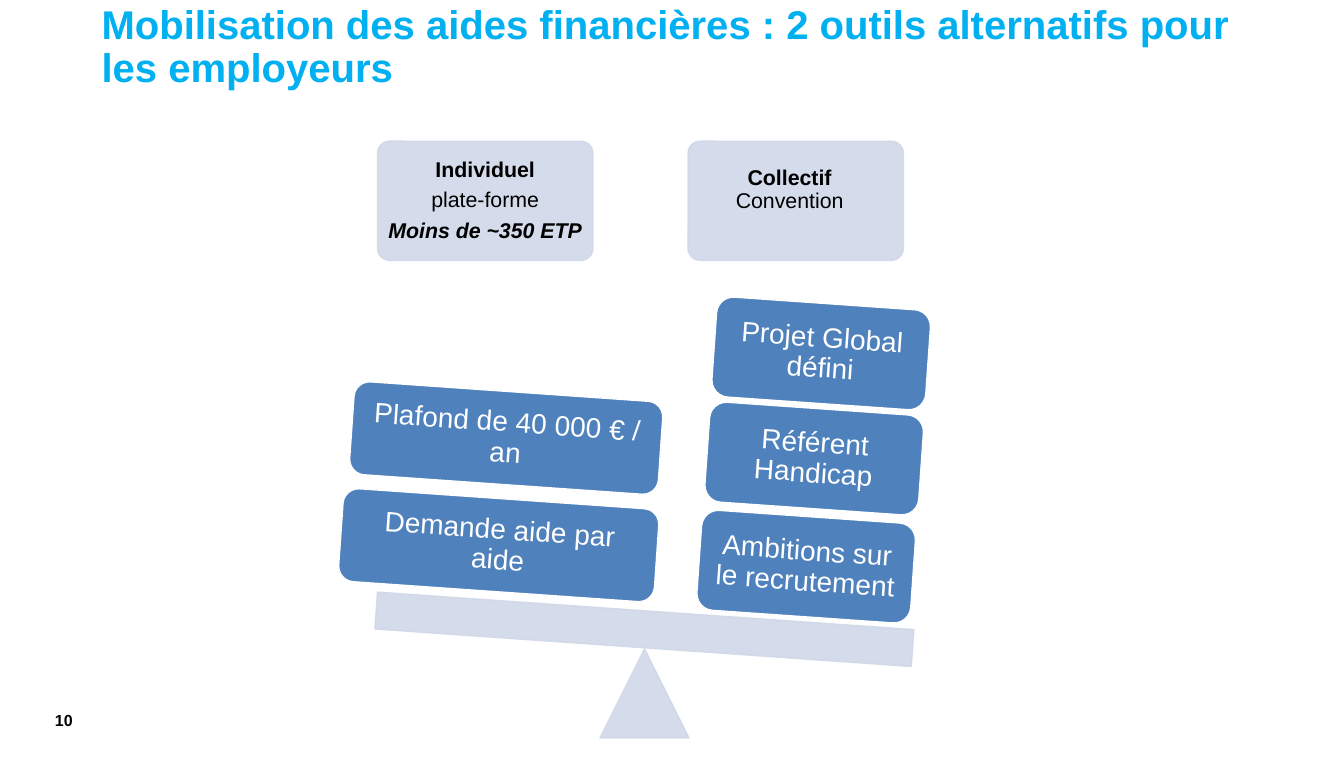
from dataclasses import dataclass

from lxml import etree
from pptx import Presentation
from pptx import util as u
from pptx.dml.color import RGBColor
from pptx.enum import shapes, text
from pptx.oxml.ns import qn

PX = 9525
PALE, BLUE, WHITE, BLACK, CYAN = "D0D8E8", "4F81BD", "FFFFFF", "000000", "00B0F0"
TILT = 4
ROUND, RECT, TRIANGLE = (
    shapes.MSO_SHAPE.ROUNDED_RECTANGLE,
    shapes.MSO_SHAPE.RECTANGLE,
    shapes.MSO_SHAPE.ISOSCELES_TRIANGLE,
)
CENTER, RIGHT = text.PP_ALIGN.CENTER, text.PP_ALIGN.RIGHT
MIDDLE = text.MSO_ANCHOR.MIDDLE


@dataclass
class Line:
    words: str
    size: int
    color: str
    bold: bool = False
    italic: bool = False
    align: text.PP_ALIGN | None = None
    after: float = 0
    indent_right: int = 0


@dataclass
class Block:
    kind: shapes.MSO_SHAPE
    left: int
    top: int
    width: int
    height: int
    fill: str = PALE
    outline: str = PALE
    alpha: int = 90
    tilt: int = 0
    corner: float | None = None
    inset: int = 7
    inset_bottom: int = 7
    lines: tuple[Line, ...] = ()


def rgb(color: str) -> RGBColor:
    return RGBColor.from_string(color)


def apply(target, values: dict) -> None:
    for name, value in values.items():
        setattr(target, name, value)


def write(frame, lines: tuple[Line, ...]) -> None:
    frame.word_wrap = True
    for number, line in enumerate(lines):
        para = frame.add_paragraph() if number else frame.paragraphs[0]
        apply(para, {"alignment": line.align, "line_spacing": 0.9,
                     "space_after": u.Pt(line.after)})
        if line.indent_right:
            para._p.get_or_add_pPr().set("marR", str(line.indent_right * PX))
        span = para.add_run()
        span.text = line.words
        apply(span.font, {"name": "Arial", "size": u.Pt(line.size),
                          "bold": line.bold, "italic": line.italic})
        span.font.color.rgb = rgb(line.color)


def draw_block(page, block: Block) -> None:
    bounds = (block.left, block.top, block.width, block.height)
    box = page.shapes.add_shape(block.kind, *(n * PX for n in bounds))
    apply(box, {"rotation": block.tilt})
    box.shadow.inherit = False
    box.fill.solid()
    box.fill.fore_color.rgb = rgb(block.fill)
    box.line.color.rgb = rgb(block.outline)
    box.line.width = u.Pt(1)
    if block.alpha < 100:
        for color in box._element.spPr.iter(qn("a:srgbClr")):
            etree.SubElement(color, qn("a:alpha"), val=str(block.alpha * 1000))
    if block.corner is not None:
        box.adjustments[0] = block.corner
    if block.lines:
        side = block.inset * PX
        apply(box.text_frame, {
            "margin_left": side, "margin_right": side, "margin_top": side,
            "margin_bottom": block.inset_bottom * PX, "vertical_anchor": MIDDLE,
        })
        write(box.text_frame, block.lines)


def draw_text(page, bounds: tuple[int, int, int, int], line: Line, anchor) -> None:
    box = page.shapes.add_textbox(*(n * PX for n in bounds))
    box.text_frame.vertical_anchor = anchor
    write(box.text_frame, (line,))


def heading(words: str, bold: bool = False, italic: bool = False,
            after: float = 5.6, indent_right: int = 0) -> Line:
    return Line(words, 16, BLACK, bold, italic, CENTER, after, indent_right)


def header(left: int, lines: tuple[Line, ...], inset_bottom: int = 7) -> Block:
    return Block(ROUND, left, 141, 215, 119, corner=0.1,
                 inset_bottom=inset_bottom, lines=lines)


def weight(words: str, left: int, top: int, width: int, height: int) -> Block:
    """A blue tile lying on the tilted beam."""
    label = Line(words, 21, WHITE, align=CENTER, after=7.35)
    return Block(ROUND, left, top, width, height, BLUE, WHITE, 100, TILT,
                 inset=9, inset_bottom=9, lines=(label,))


BLOCKS = (
    header(377, (
        heading("Individuel", bold=True),
        heading("plate-forme"),
        heading("Moins de ~350 ETP", bold=True, italic=True),
    )),
    header(687, (
        heading("Collectif", bold=True, after=0, indent_right=12),
        heading("Convention"),
    ), inset_bottom=29),
    Block(TRIANGLE, 599, 648, 89, 89),
    Block(RECT, 375, 610, 537, 37, tilt=TILT),
    weight("Ambitions sur le recrutement", 698, 516, 214, 100),
    weight("Référent Handicap", 706, 408, 214, 100),
    weight("Projet Global défini", 713, 303, 214, 100),
    weight("Demande aide par aide", 340, 498, 316, 93),
    weight("Plafond de 40 000 € / an", 351, 391, 309, 93),
)


def main() -> None:
    deck = Presentation()
    apply(deck, {"slide_width": 1342 * PX, "slide_height": 756 * PX})
    page = deck.slides.add_slide(deck.slide_layouts[6])
    draw_text(page, (6, 710, 76, 20),
              Line("10", 12, BLACK, bold=True, align=RIGHT), MIDDLE)
    draw_text(page, (92, 0, 1158, 108),
              Line("Mobilisation des aides financières : 2 outils alternatifs "
                   "pour les employeurs", 30, CYAN, bold=True),
              text.MSO_ANCHOR.TOP)
    for block in BLOCKS:
        draw_block(page, block)
    deck.save("out.pptx")


if __name__ == "__main__":
    main()
